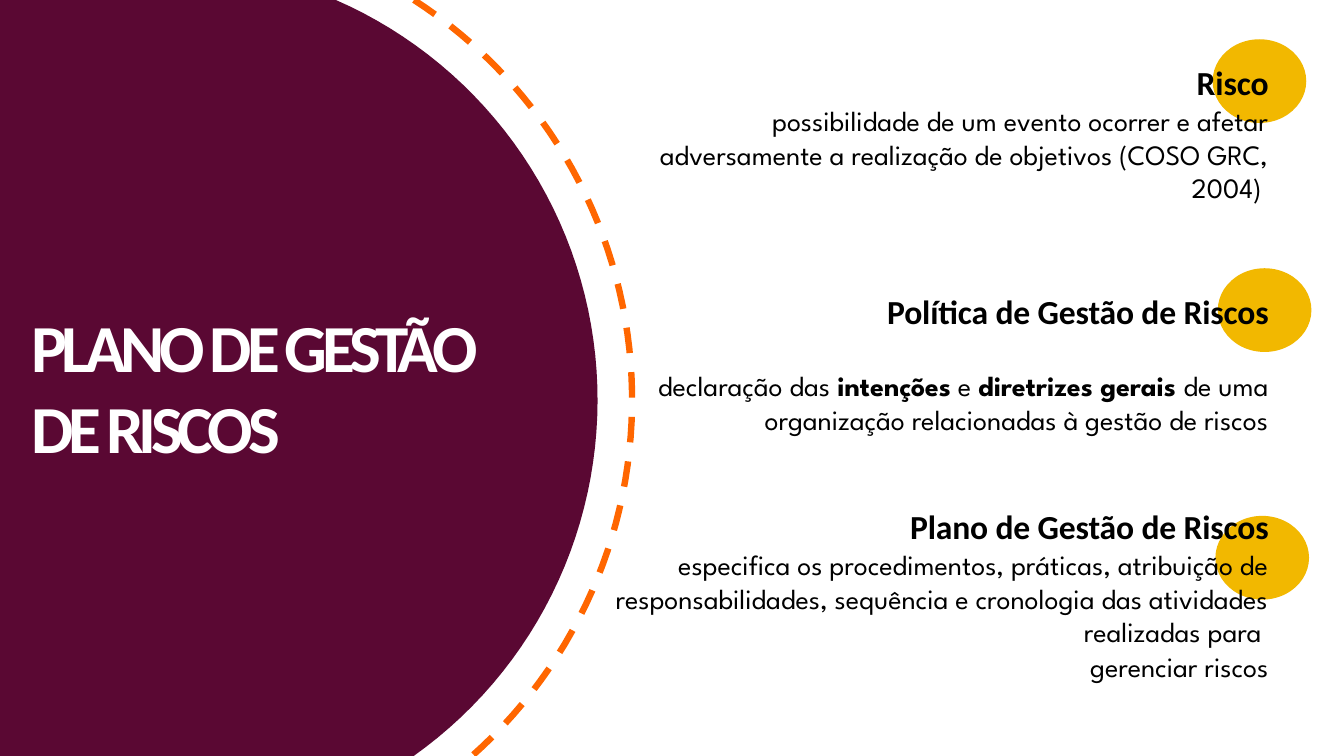
from dataclasses import dataclass
from math import asin, cos, sin

from lxml.etree import SubElement
from pptx import Presentation
from pptx.dml.color import RGBColor
from pptx.enum.dml import MSO_LINE
from pptx.enum.shapes import MSO_SHAPE
from pptx.enum.text import MSO_ANCHOR, MSO_AUTO_SIZE, PP_ALIGN
from pptx.oxml.ns import qn
from pptx.util import Cm, Pt

WIDE, HIGH = 33.87, 19.05
MID = 10.08
STEPS = 60
PLUM, GOLD, ORANGE = "5A0833", "F2B800", "FF6600"
WHITE, BLACK = "FFFFFF", "000000"

TITLE = {"name": "Calibri", "size": Pt(48), "bold": True}
HEAD = {"name": "Calibri", "size": Pt(24), "bold": True}
PLAIN = {"name": "League Spartan", "size": Pt(20), "bold": False}
STRONG = PLAIN | {"bold": True}


@dataclass
class Words:
    text: str
    style: dict
    track: int = 0
    color: str = BLACK


@dataclass
class Para:
    words: list[Words]
    before: float = 1.1
    align: PP_ALIGN = PP_ALIGN.RIGHT


@dataclass
class Dot:
    left: float
    top: float


DOTS = [Dot(30.56, 0.99), Dot(30.69, 6.76), Dot(30.63, 13)]

HEADING = [Para([Words("PLANO DE GESTÃO DE RISCOS", TITLE, -370, WHITE)],
                0, PP_ALIGN.LEFT)]

TERMS = [
    Para([Words("Risco", HEAD, -10)], 0),
    Para([Words("possibilidade de um evento ocorrer e afetar adversamente a "
                "realização de objetivos (COSO GRC, 2004) ", PLAIN)]),
    Para([Words("Política de Gestão de Riscos", HEAD, -10)], 61.9),
    Para([Words("declaração das ", PLAIN),
          Words("intenções", STRONG),
          Words(" e ", PLAIN),
          Words("diretrizes gerais ", STRONG),
          Words("de uma organização relacionadas à gestão de riscos", PLAIN)],
         26.6),
    Para([Words("Plano de Gestão de Riscos", HEAD, -10)], 49.9),
    Para([Words("especifica os procedimentos, práticas, atribuição de "
                "responsabilidades, sequência e cronologia das atividades "
                "realizadas para ", PLAIN)]),
    Para([Words("gerenciar riscos", PLAIN)]),
]


def assign(target, values: dict) -> None:
    for name, value in values.items():
        setattr(target, name, value)


def paint(target, color: str) -> None:
    """Give a fill, line or font a solid colour."""
    fill = getattr(target, "fill", target)
    fill.solid()
    fill.fore_color.rgb = RGBColor.from_string(color)


def curve(x: float, radius: float) -> list[tuple[int, int]]:
    """Points of a circle's right side, cut at the slide's top and bottom."""
    start, end = asin(-MID / radius), asin((HIGH - MID) / radius)
    turns = [start + (end - start) * i / STEPS for i in range(STEPS + 1)]
    return [(Cm(x + radius * cos(t)), Cm(MID + radius * sin(t)))
            for t in turns]


def outline(slide, points: list[tuple[int, int]], close: bool):
    maker = slide.shapes.build_freeform(*points[0])
    maker.add_line_segments(points[1:], close=close)
    shape = maker.convert_to_shape()
    shape.shadow.inherit = False
    return shape


def add_panel(slide) -> None:
    corners = [(0, Cm(HIGH)), (0, 0)]
    panel = outline(slide, curve(4.06, 11) + corners, True)
    paint(panel.fill, PLUM)
    panel.line.fill.background()


def add_arc(slide) -> None:
    arc = outline(slide, curve(3.94, 11.99), False)
    arc.fill.background()
    paint(arc.line, ORANGE)
    assign(arc.line, {"width": Pt(4.56), "dash_style": MSO_LINE.DASH})


def add_dot(slide, dot: Dot) -> None:
    oval = slide.shapes.add_shape(MSO_SHAPE.OVAL, Cm(dot.left), Cm(dot.top),
                                  Cm(2.36), Cm(2.11))
    oval.shadow.inherit = False
    paint(oval.fill, GOLD)
    oval.line.fill.background()


def write(holder, box: dict, paras: list[Para]) -> None:
    """Place a placeholder, fill it and bring it to the front."""
    assign(holder, {name: Cm(size) for name, size in box.items()})
    frame = holder.text_frame
    assign(frame, {"margin_left": 0, "margin_right": 0, "margin_bottom": 0,
                   "margin_top": Cm(0.03), "word_wrap": True,
                   "auto_size": MSO_AUTO_SIZE.NONE,
                   "vertical_anchor": MSO_ANCHOR.TOP})
    for i, para in enumerate(paras):
        line = frame.add_paragraph() if i else frame.paragraphs[0]
        props = line._p.get_or_add_pPr()
        props.set("marL", "0")
        props.set("indent", "0")
        SubElement(props, qn("a:buNone"))
        assign(line, {"alignment": para.align,
                      "space_before": Pt(para.before)})
        for words in para.words:
            run = line.add_run()
            run.text = words.text
            assign(run.font, words.style)
            paint(run.font, words.color)
            run._r.get_or_add_rPr().set("spc", str(words.track))
    holder._element.getparent().append(holder._element)


def main() -> None:
    deck = Presentation()
    assign(deck, {"slide_width": Cm(WIDE), "slide_height": Cm(HIGH)})
    slide = deck.slides.add_slide(deck.slide_layouts[1])
    add_panel(slide)
    add_arc(slide)
    for dot in DOTS:
        add_dot(slide, dot)
    write(slide.shapes.title,
          {"left": 0.79, "top": 7.67, "width": 12.22, "height": 4.14}, HEADING)
    write(slide.placeholders[1],
          {"left": 15.37, "top": 1.52, "width": 16.6, "height": 17.35}, TERMS)
    deck.save("out.pptx")


if __name__ == "__main__":
    main()
